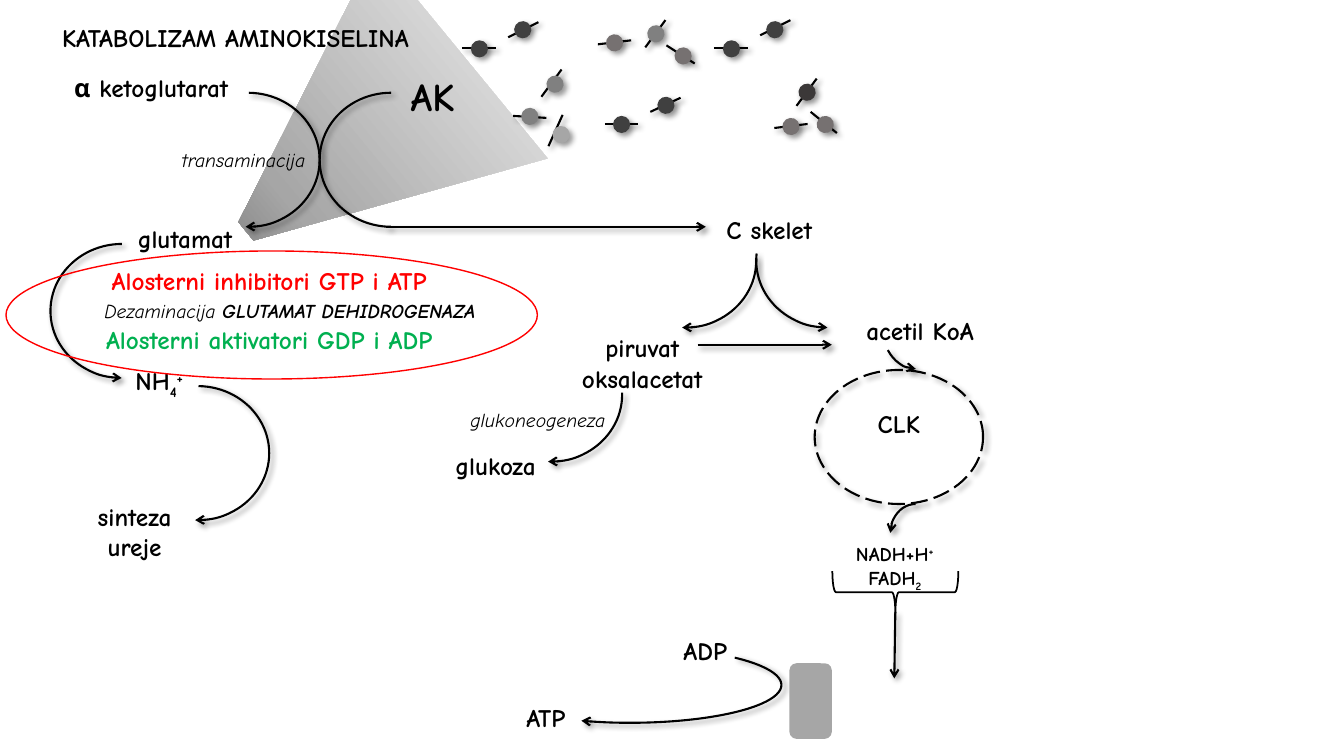
from math import atan2, degrees

from pptx import Presentation
from pptx.dml.color import RGBColor
from pptx.enum.dml import MSO_LINE
from pptx.enum.shapes import MSO_CONNECTOR, MSO_SHAPE
from pptx.enum.text import MSO_ANCHOR, MSO_AUTO_SIZE, PP_ALIGN
from pptx.oxml import parse_xml
from pptx.oxml.ns import nsdecls, qn
from pptx.util import Emu, Pt

PX = 9144  # 100 px to the inch
FONT = "Comic Neue"
BLACK, RED, GREEN, GREY = "000000", "FF0000", "00B050", "A6A6A6"
BASELINES = {"+": "30000", "-": "-25000"}
SHADOW = (f'<a:effectLst {nsdecls("a")}><a:outerShdw blurRad="50800" dist="38100" '
          'dir="2700000" algn="tl" rotWithShape="0"><a:srgbClr val="000000">'
          '<a:alpha val="40000"/></a:srgbClr></a:outerShdw></a:effectLst>')
GRADIENT = (f'<a:gradFill {nsdecls("a")} rotWithShape="1"><a:gsLst>'
            '<a:gs pos="0"><a:srgbClr val="F2F2F2"/></a:gs>'
            '<a:gs pos="66000"><a:srgbClr val="A6A6A6"/></a:gs>'
            '<a:gs pos="100000"><a:srgbClr val="595959"/></a:gs>'
            '</a:gsLst><a:lin ang="16200000" scaled="0"/></a:gradFill>')


def box(*lengths):
    return [Emu(n * PX) for n in lengths]


def set_line(sp, color=BLACK, width=1.5, arrow=None, shadow=True):
    """Line colour and width, arrow "head" or "tail", and a soft shadow."""
    sp.line.color.rgb = RGBColor.from_string(color)
    sp.line.width = Pt(width)
    spPr = sp._element.spPr
    if arrow:
        spPr.find(qn("a:ln")).append(
            parse_xml(f'<a:{arrow}End {nsdecls("a")} type="arrow"/>'))
    if shadow:
        spPr.append(parse_xml(SHADOW))


prs = Presentation()
prs.slide_width, prs.slide_height = box(1333, 750)
slide = prs.slides.add_slide(prs.slide_layouts[5])
shapes = slide.shapes
title = shapes.title

# Grey beam behind the title
sp = shapes.add_shape(MSO_SHAPE.TRAPEZOID, *box(217, 3, 268, 277))
sp.adjustments[0] = 0.456
sp.rotation = 230.6
sp.shadow.inherit = False
sp.line.fill.background()
sp._element.spPr.find(qn("a:prstGeom")).addnext(parse_xml(GRADIENT))
title._element.addprevious(sp._element)

# Labels: box, size, colour, paragraphs of (text, style) runs
labels = [
    ((0, 17, 467, 40), 18, BLACK, [[("KATABOLIZAM AMINOKISELINA", "b")]]),
    ((383, 67, 92, 57), 28, BLACK, [[("AK", "b")]]),
    ((50, 67, 200, 40), 18, BLACK, [[("α ketoglutarat", "b")]]),
    ((117, 217, 133, 40), 18, BLACK, [[("glutamat", "b")]]),
    ((692, 208, 142, 40), 18, BLACK, [[("C skelet", "b")]]),
    ((150, 142, 183, 34), 14, BLACK, [[("transaminacija", "i")]]),
    ((108, 358, 100, 40), 18, BLACK, [[("NH", "b"), ("4", "b-"), ("+", "b+")]]),
    ((67, 258, 400, 40), 18, RED, [[("Alosterni inhibitori GTP i ATP", "b")]]),
    ((67, 317, 400, 40), 18, GREEN, [[("Alosterni aktivatori GDP i ADP", "b")]]),
    ((50, 292, 475, 34), 14, BLACK,
     [[("Dezaminacija ", "i"), ("GLUTAMAT DEHIDROGENAZA", "bi")]]),
    ((67, 492, 133, 71), 18, BLACK, [[("sinteza ureje", "b")]]),
    ((558, 325, 158, 71), 18, BLACK, [[("piruvat", "b")], [("oksalacetat", "b")]]),
    ((825, 308, 175, 40), 18, BLACK, [[("acetil KoA", "b")]]),
    ((425, 442, 133, 40), 18, BLACK, [[("glukoza", "b")]]),
    ((450, 400, 167, 34), 14, BLACK, [[("glukoneogeneza", "i")]]),
    ((825, 400, 133, 40), 18, BLACK, [[("CLK", "b")]]),
    ((800, 533, 175, 57), 14, BLACK,
     [[("NADH+H", "b"), ("+", "b+")], [("FADH", "b"), ("2", "b-")]]),
    ((658, 625, 83, 40), 18, BLACK, [[("ADP", "b")]]),
    ((500, 692, 83, 40), 18, BLACK, [[("ATP", "b")]]),
]
for i, (place, size, color, paragraphs) in enumerate(labels):
    if i == 0:
        sp = title
        sp.left, sp.top, sp.width, sp.height = box(*place)
    else:
        sp = shapes.add_textbox(*box(*place))
    tf = sp.text_frame
    tf.word_wrap = True
    tf.auto_size = MSO_AUTO_SIZE.SHAPE_TO_FIT_TEXT
    tf.vertical_anchor = MSO_ANCHOR.TOP
    for j, runs in enumerate(paragraphs):
        p = tf.add_paragraph() if j else tf.paragraphs[0]
        p.alignment = PP_ALIGN.CENTER
        for text, style in runs:
            r = p.add_run()
            r.text = text
            r.font.name = FONT
            r.font.size = Pt(size)
            r.font.bold = "b" in style
            r.font.italic = "i" in style
            r.font.color.rgb = RGBColor.from_string(color)
            if style[-1] in BASELINES:
                r.font._element.set("baseline", BASELINES[style[-1]])

# Curved arrows: box, start and end angle in degrees, arrow end
arcs = [
    ((175, 92, 142, 133), 90.76, 272.12, "tail"),
    ((317, 92, 142, 133), 270.31, 89.92, None),
    ((125, 383, 142, 133), 90.76, 272.12, "tail"),
    ((50, 242, 142, 133), 270.31, 89.92, "head"),
    ((750, 192, 142, 133), 270.31, 5.67, "head"),
    ((608, 192, 142, 133), 178.29, 272.12, "tail"),
    ((475, 325, 142, 133), 178.29, 272.12, "tail"),
    ((875, 283, 67, 83), 270.31, 320.82, "head"),
    ((808, 367, 167, 133), 178.29, 178.04, None),  # citric acid cycle
    ((883, 500, 50, 58), 0.8, 89.92, "head"),
    ((475, 642, 300, 75), 165.36, 323.72, "tail"),
]
for place, start, end, arrow in arcs:
    sp = shapes.add_shape(MSO_SHAPE.ARC, *box(*place))
    sp.rotation = 180
    sp.adjustments[0], sp.adjustments[1] = start * 0.6, end * 0.6
    sp.fill.background()
    if place[2] == 167:
        sp.line.dash_style = MSO_LINE.LONG_DASH
    set_line(sp, arrow=arrow)

# Straight arrows
for ends in [(383, 225, 700, 225), (692, 342, 825, 342), (888, 607, 887, 673)]:
    sp = shapes.add_connector(MSO_CONNECTOR.STRAIGHT, *box(*ends))
    set_line(sp, arrow="tail")

# Brace under the reduced coenzymes
sp = shapes.add_shape(MSO_SHAPE.RIGHT_BRACE, *box(867, 525, 42, 125))
sp.rotation = 90
sp.shadow.inherit = False
sp.fill.background()
set_line(sp, width=1.25, shadow=False)

# Enzyme block
sp = shapes.add_shape(MSO_SHAPE.ROUNDED_RECTANGLE, *box(783, 658, 42, 75))
sp.shadow.inherit = False
sp.fill.solid()
sp.fill.fore_color.rgb = RGBColor.from_string(GREY)
sp.line.fill.background()

# Amino acids: ends of the bar, corner of the dot, dot colour
amino_acids = [
    ((804, 111, 830, 132), (810, 115), "767171"),
    ((790, 105, 810, 78), (792, 83), "3B3838"),
    ((558, 114, 544, 145), (548, 125), GREY),
    ((537, 96, 557, 69), (542, 75), "808080"),
    ((509, 115, 542, 117), (517, 107), "808080"),
    ((768, 127, 801, 123), (776, 117), "767171"),
    ((600, 123, 633, 123), (608, 115), "404040"),
    ((645, 111, 675, 97), (652, 96), "404040"),
    ((458, 48, 492, 48), (467, 40), "404040"),
    ((504, 37, 534, 22), (510, 21), "404040"),
    ((708, 48, 742, 48), (717, 40), "404040"),
    ((754, 35, 784, 20), (760, 21), "404040"),
    ((593, 44, 626, 40), (601, 34), "767171"),
    ((661, 45, 689, 63), (669, 47), "767171"),
    ((640, 47, 660, 20), (642, 25), "808080"),
]
for ends, corner, color in amino_acids:
    group = shapes.add_group_shape().shapes
    set_line(group.add_connector(MSO_CONNECTOR.STRAIGHT, *box(*ends)))
    sp = group.add_shape(MSO_SHAPE.OVAL, *box(*corner, 17, 17))
    x1, y1, x2, y2 = ends
    sp.rotation = degrees(atan2(y2 - y1, x2 - x1)) % 360
    sp.fill.solid()
    sp.fill.fore_color.rgb = RGBColor.from_string(color)
    sp.line.fill.background()
    sp._element.spPr.append(parse_xml(SHADOW))

# Red ring around the regulated step
sp = shapes.add_shape(MSO_SHAPE.OVAL, *box(6, 249, 527, 127))
sp.shadow.inherit = False
sp.fill.background()
set_line(sp, RED, 1, shadow=False)

prs.save("out.pptx")
